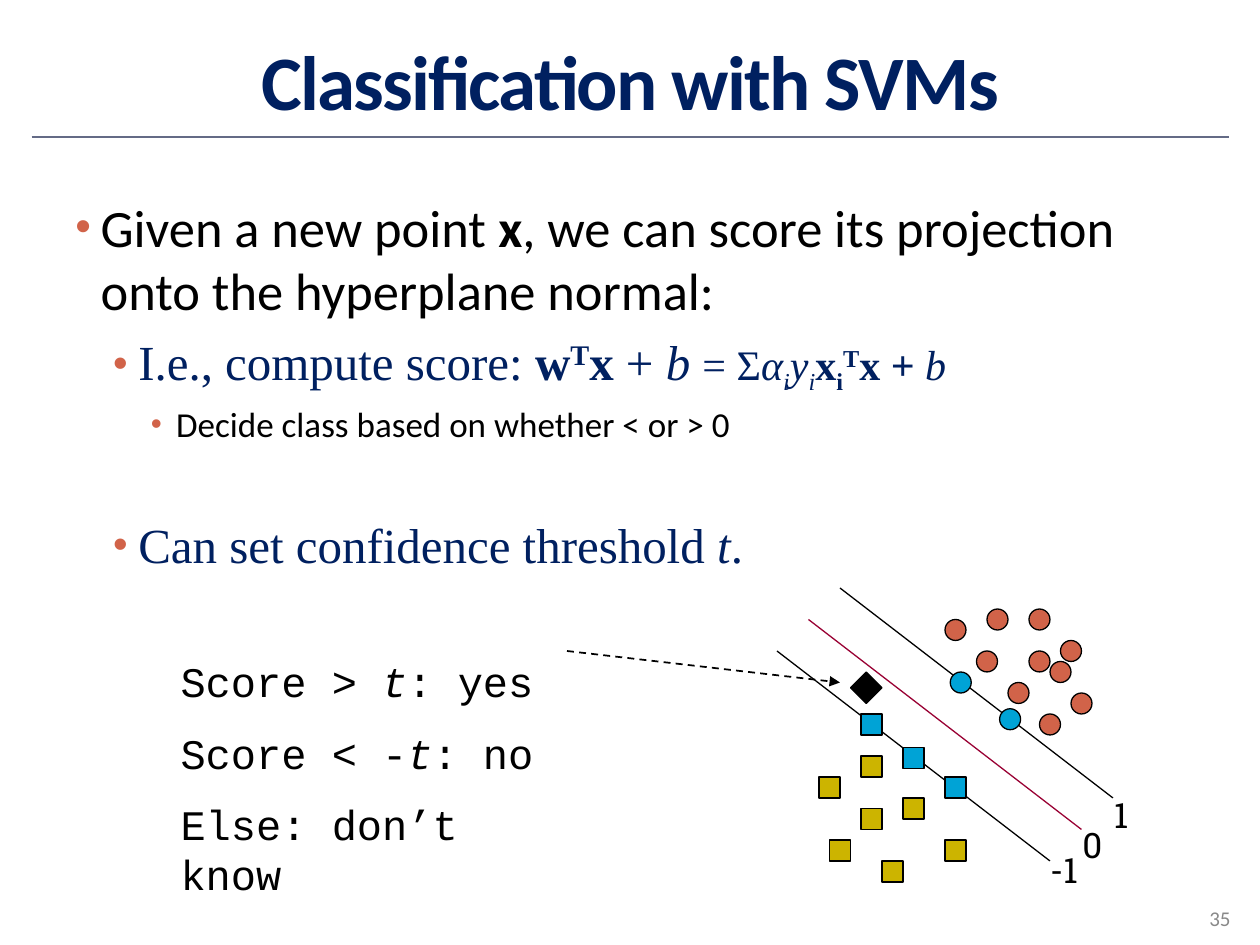
from lxml.etree import SubElement as Sub
from pptx import Presentation
from pptx.dml.color import RGBColor as RGB
from pptx.enum.dml import MSO_LINE
from pptx.enum.shapes import MSO_CONNECTOR, MSO_SHAPE as Shape
from pptx.enum.text import MSO_ANCHOR as Anchor, PP_ALIGN as Align
from pptx.oxml.ns import qn
from pptx.util import Cm, Pt

NAVY = RGB(0x00, 0x20, 0x60)
BLACK = RGB(0, 0, 0)
SLATE = RGB(0x64, 0x6B, 0x86)
GREY = RGB(0x89, 0x89, 0x89)
RED = RGB(0xD1, 0x63, 0x49)
GOLD = RGB(0xCC, 0xB4, 0x00)
BLUE = RGB(0x00, 0xA3, 0xD6)
WINE = RGB(0x99, 0x00, 0x33)
UNIT = Cm(25.4) / 120  # the plot grid: 120 steps across the slide

deck = Presentation()
deck.slide_width, deck.slide_height = Cm(25.4), Cm(19.05)
slide = deck.slides.add_slide(deck.slide_layouts[5])
shapes = slide.shapes


def grid(*steps):
    return [round(n * UNIT) for n in steps]


def write(par, parts, font, size, color):
    """Add (text, marks) runs: b bold, i italic, s smaller, ^ and _ raised and lowered."""
    for text, marks in parts:
        run = par.add_run()
        run.text = text
        run.font.name = font
        run.font.size = Pt(size - 4 if "s" in marks else size)
        run.font.color.rgb = color
        run.font.bold = "b" in marks
        run.font.italic = "i" in marks
        if "^" in marks:
            run.font._element.set("baseline", "30000")
        if "_" in marks:
            run.font._element.set("baseline", "-25000")


# Title
title = shapes.title
title.left, title.top, title.width, title.height = Cm(1.27), Cm(0.43), Cm(22.86), Cm(2.34)
title.text_frame.vertical_anchor = Anchor.MIDDLE
par = title.text_frame.paragraphs[0]
par.alignment = Align.CENTER
write(par, [("Classification with SVMs", "b")], "Calibri", 44, NAVY)
par.runs[0].font._element.set("spc", "-100")

# Bullets: level, space before, font, size, colour, runs
score = [
    ("I.e., compute score: ", ""), ("w", "b"), ("T", "b^"), ("x", "b"), (" + ", ""),
    ("b ", "i"), ("= Σ", "s"), ("α", "si"), ("i", "si_"), ("y", "si"), ("i", "si_"),
    ("x", "sb"), ("i", "sb_"), ("T", "sb^"), ("x + ", "sb"), ("b", "si"),
]
given = [("Given a new point ", ""), ("x", "b"),
         (", we can score its projection onto the hyperplane normal:", "")]
limit = [("Can set confidence threshold ", ""), ("t", "i"), (".", "")]
items = [
    (0, 0, "Calibri", 30, BLACK, given),
    (1, 6, "Times New Roman", 28, NAVY, score),
    (2, 4, "Calibri", 20, BLACK, [("Decide class based on whether < or > 0", "")]),
    (1, 40, "Times New Roman", 28, NAVY, limit),
]
frame = shapes.add_textbox(Cm(1.27), Cm(3.18), Cm(22.86), Cm(14.8)).text_frame
frame.word_wrap = True
frame.margin_top = Cm(0.75)
for n, (level, gap, font, size, color, parts) in enumerate(items):
    par = frame.add_paragraph() if n else frame.paragraphs[0]
    par.level = level
    par.space_before = Pt(gap)
    write(par, parts, font, size, color)
    props = par._p.get_or_add_pPr()
    props.set("marL", str(Cm(0.51 + 0.76 * level)))
    props.set("indent", str(-Cm(0.51)))
    Sub(Sub(props, qn("a:buClr")), qn("a:srgbClr")).set("val", str(RED))
    Sub(props, qn("a:buSzPct")).set("val", "90000" if level == 2 else "85000")
    Sub(props, qn("a:buFont")).set("typeface", "Arial")
    Sub(props, qn("a:buChar")).set("char", "•")

# Lines, in grid steps: ends, colour, width
lines = [
    ((3, 13.05, 117, 13.05), SLATE, 1.5),
    ((77, 59, 103, 79), WINE, 0.75),
    ((80, 56, 106, 76), BLACK, 0.75),
    ((74, 62, 100, 82), BLACK, 0.75),
    ((54, 62, 80, 65), BLACK, 1),
]
for ends, color, width in lines:
    line = shapes.add_connector(MSO_CONNECTOR.STRAIGHT, *grid(*ends))
    line.line.color.rgb = color
    line.line.width = Pt(width)
    Sub(line._element.spPr, qn("a:effectLst"))
# The last line is the arrow to the new point
line.line.dash_style = MSO_LINE.DASH
Sub(line.line._get_or_add_ln(), qn("a:tailEnd")).set("type", "triangle")

# Points, in grid steps: preset, colour, size, places
marks = [
    (Shape.OVAL, RED, 2, [(94, 58), (98, 62), (96, 65), (102, 66), (99, 68),
                          (98, 58), (90, 59), (100, 63), (101, 61), (93, 62)]),
    (Shape.RECTANGLE, GOLD, 2, [(82, 72), (84, 82), (86, 76), (90, 80),
                                (78, 74), (82, 77), (79, 80)]),
    (Shape.OVAL, BLUE, 2, [(90.5, 64), (95.2, 67.5)]),
    (Shape.RECTANGLE, BLUE, 2, [(86, 71.2), (90, 74), (82, 68)]),
    (Shape.DIAMOND, BLACK, 3, [(81, 64)]),
]
for kind, color, size, spots in marks:
    for x, y in spots:
        dot = shapes.add_shape(kind, *grid(x, y, size, size))
        dot.shadow.inherit = False
        dot.fill.solid()
        dot.fill.fore_color.rgb = color
        dot.line.color.rgb = BLACK
        dot.line.width = Pt(0.75)

# Line labels: text, place and width in grid steps
for text, x, y, wide in [("-1", 98.8, 80.2, 5.4), ("0", 101.9, 77.8, 4.2),
                         ("1", 104.9, 75, 4.2)]:
    label = shapes.add_textbox(*grid(x, y, wide, 5.2)).text_frame
    label.word_wrap = True
    label.margin_right = 0
    write(label.paragraphs[0], [(text, "")], "Roboto Slab", 20, BLACK)

# Decision rules
rules = [
    [("Score > ", ""), ("t", "i"), (": yes", "")],
    [("Score < -", ""), ("t", "i"), (": no", "")],
    [("Else: don’t know", "")],
]
frame = shapes.add_textbox(Cm(3.39), Cm(13.06), Cm(8.04), Cm(4.37)).text_frame
frame.word_wrap = True
frame.margin_top = Cm(0.16)
for n, parts in enumerate(rules):
    par = frame.add_paragraph() if n else frame.paragraphs[0]
    par.space_before = Pt(12 if n else 0)
    write(par, parts, "Courier New", 24, BLACK)

# Slide number
frame = shapes.add_textbox(Cm(24.13), Cm(18.06), Cm(1.27), Cm(0.91)).text_frame
frame.vertical_anchor = Anchor.MIDDLE
write(frame.paragraphs[0], [("35", "")], "Calibri", 12, GREY)

deck.save("out.pptx")
